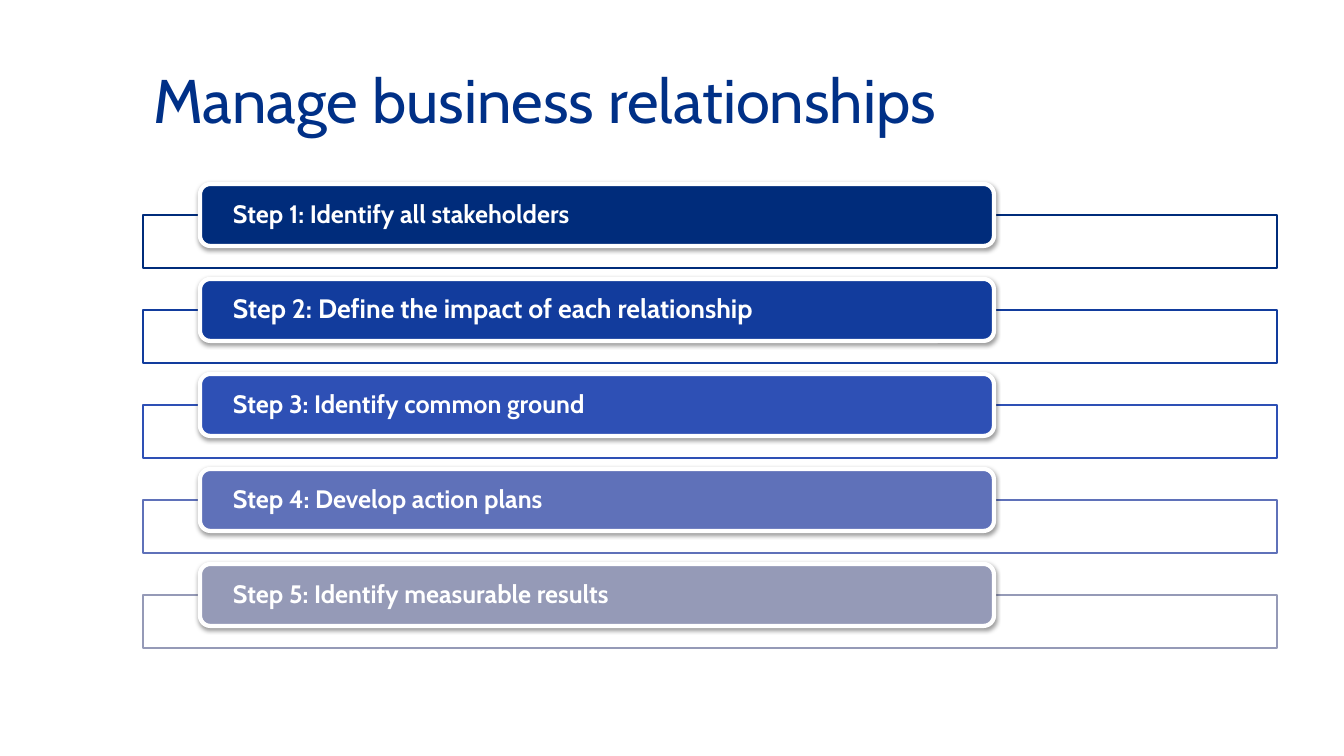
from lxml import etree
from pptx import Presentation
from pptx import util as u
from pptx.dml.color import RGBColor
from pptx.enum import shapes, text
from pptx.oxml.ns import qn

# Slide size in px, and the one scale that turns px into EMU
WIDTH, HEIGHT = 1344, 756
SCALE = 12192000 / WIDTH

FONT = "Cabin"
WHITE = RGBColor(0xFF, 0xFF, 0xFF)
TITLE_BLUE = RGBColor(0x00, 0x30, 0x87)

# Label, text size, colour
STEPS = [
    ("Step 1: Identify all stakeholders", 18, RGBColor(0x00, 0x2C, 0x7B)),
    ("Step 2: Define the impact of each relationship", 19, RGBColor(0x12, 0x3C, 0x9D)),
    ("Step 3: Identify common ground", 18, RGBColor(0x2E, 0x50, 0xB5)),
    ("Step 4: Develop action plans", 18, RGBColor(0x5F, 0x71, 0xB9)),
    ("Step 5: Identify measurable results", 18, RGBColor(0x95, 0x9A, 0xB7)),
]
FIRST_TOP, STEP_PITCH = 184, 95
FRAME_DROP = 31


def px(length):
    return u.Emu(round(length * SCALE))


def add_span(para, words, size, colour, bold=False):
    span = para.add_run()
    span.text = words
    span.font.name = FONT
    span.font.size = u.Pt(size)
    span.font.bold = bold
    span.font.color.rgb = colour


def add_box(page, kind, place, fill, line, line_width):
    box = page.shapes.add_shape(kind, *map(px, place))
    box.shadow.inherit = False
    box.fill.solid()
    box.fill.fore_color.rgb = fill
    box.line.color.rgb = line
    box.line.width = u.Pt(line_width)
    return box


def add_alpha(colour_element, percent):
    etree.SubElement(colour_element, qn("a:alpha"), val=str(percent * 1000))


def add_shadow(box):
    effects = box._element.spPr.find(qn("a:effectLst"))
    shadow = etree.SubElement(
        effects, qn("a:outerShdw"), blurRad=str(u.Pt(3.1)), dist=str(u.Pt(1.6)),
        dir="5400000", algn="ctr", rotWithShape="0")
    add_alpha(etree.SubElement(shadow, qn("a:srgbClr"), val="000000"), 38)


def add_title(page, words):
    title = page.shapes.title
    title.left, title.top, title.width, title.height = map(px, (143, 52, 1134, 104))
    frame = title.text_frame
    frame.word_wrap = True
    frame.vertical_anchor = text.MSO_ANCHOR.MIDDLE
    para = frame.paragraphs[0]
    para.alignment = text.PP_ALIGN.LEFT
    para.line_spacing = 0.9
    add_span(para, words, 44, TITLE_BLUE)


def add_step(page, top, label, size, colour):
    # Open frame behind the label
    frame = add_box(page, shapes.MSO_SHAPE.RECTANGLE,
                    (143, top + FRAME_DROP, 1134, 53), WHITE, colour, 2)
    add_alpha(frame._element.spPr.find(qn("a:solidFill"))[0], 90)

    # Label bar
    bar = add_box(page, shapes.MSO_SHAPE.ROUNDED_RECTANGLE,
                  (200, top, 794, 62), colour, WHITE, 3)
    add_shadow(bar)
    body = bar.text_frame
    body.word_wrap = True
    body.vertical_anchor = text.MSO_ANCHOR.MIDDLE
    body.margin_left = body.margin_right = px(30)
    body.margin_top = body.margin_bottom = 0
    para = body.paragraphs[0]
    para.alignment = text.PP_ALIGN.LEFT
    para.line_spacing = 0.9
    add_span(para, label, size, WHITE, bold=True)


def main():
    deck = Presentation()
    deck.slide_width, deck.slide_height = px(WIDTH), px(HEIGHT)
    page = deck.slides.add_slide(deck.slide_layouts[5])
    add_title(page, "Manage business relationships")
    for index, step in enumerate(STEPS):
        add_step(page, FIRST_TOP + index * STEP_PITCH, *step)
    deck.save("out.pptx")


if __name__ == "__main__":
    main()
